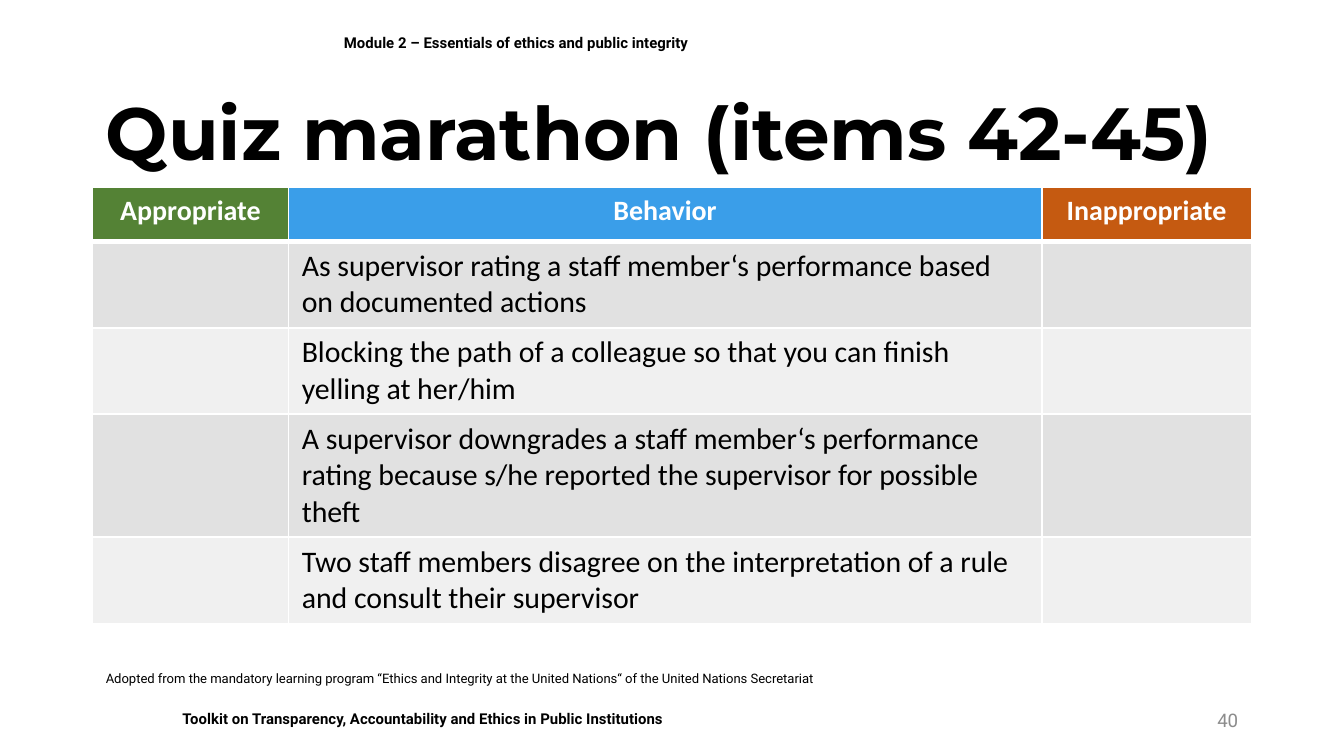
from lxml import etree
from pptx import Presentation
from pptx.dml.color import RGBColor
from pptx.enum import shapes, text
from pptx.oxml.ns import qn
from pptx.util import Cm, Pt

THEME = {
    "black": "000000", "white": "FFFFFF", "grey": "8C8C8C",
    "green": "548235", "blue": "3A9EE9", "orange": "C55A11",
    "bands": ("E1E1E1", "F0F0F0"),
    "title_font": "Montserrat", "label_font": "Roboto", "table_font": "Calibri",
    "title": 39.6, "behavior": 16, "heading": 15, "number": 10, "label": 8, "source": 7,
}

MARGIN, CONTENT_WIDTH = 1.75, 21.9
TABLE_TOP = 3.53
HEADING_HEIGHT = 1.03
COLUMNS = [  # heading, colour, width in cm
    ("Appropriate", "green", 3.7),
    ("Behavior", "blue", 14.24),
    ("Inappropriate", "orange", 3.96),
]
BEHAVIORS = [  # wording, row height in cm
    ("As supervisor rating a staff member‘s performance based on documented actions", 1.61),
    ("Blocking the path of a colleague so that you can finish yelling at her/him", 1.61),
    ("A supervisor downgrades a staff member‘s performance rating because s/he reported "
     "the supervisor for possible theft", 2.29),
    ("Two staff members disagree on the interpretation of a rule and consult their supervisor", 1.61),
]

FOOTER = "Toolkit on Transparency, Accountability and Ethics in Public Institutions"
FOOTER_BOX = (3.2, 13.28, 18.21, 0.61)
TEXT_BOXES = [  # wording, left/top/width/height in cm, format
    ("Module 2 – Essentials of ethics and public integrity", (6.25, 0.25, 17.4, 1.12),
     dict(size="label", bold=True, anchor="MIDDLE")),
    ("40", (17.93, 13.23, 5.72, 0.76),
     dict(size="number", color="grey", align="RIGHT", anchor="MIDDLE")),
    ("Quiz marathon (items 42-45)", (MARGIN, 1.63, CONTENT_WIDTH, 1.9),
     dict(size="title", font="title_font", bold=True, anchor="MIDDLE", line_spacing=0.9)),
    ("Adopted from the mandatory learning program “Ethics and Integrity at the United "
     "Nations“ of the United Nations Secretariat", (MARGIN, 12.55, 14.05, 0.56),
     dict(size="source")),
]


def theme_color(name):
    return RGBColor.from_string(THEME.get(name, name))


def write(frame, wording, size, font="label_font", color="black", bold=False,
          align="LEFT", anchor="TOP", line_spacing=None):
    frame.word_wrap = True
    frame.vertical_anchor = text.MSO_ANCHOR[anchor]
    paragraph = frame.paragraphs[0]
    paragraph.alignment = text.PP_ALIGN[align]
    if line_spacing:
        paragraph.line_spacing = line_spacing
    run = paragraph.add_run()
    run.text = wording
    run.font.size = Pt(THEME[size])
    run.font.name = THEME[font]
    run.font.bold = bold
    run.font.color.rgb = theme_color(color)


def style_cell(cell, fill, top=1, bottom=1):
    """Fill a cell and give it white borders, widths in points."""
    properties = cell._tc.get_or_add_tcPr()
    for side, width in (("L", 1), ("R", 1), ("T", top), ("B", bottom)):
        border = etree.SubElement(properties, qn(f"a:ln{side}"), w=str(Pt(width)))
        solid = etree.SubElement(border, qn("a:solidFill"))
        etree.SubElement(solid, qn("a:srgbClr"), val=THEME["white"])
    cell.fill.solid()
    cell.fill.fore_color.rgb = theme_color(fill)


def add_footer(slide):
    footer = slide.shapes.add_shape(shapes.MSO_SHAPE.RECTANGLE, *map(Cm, FOOTER_BOX))
    footer.shadow.inherit = False
    footer.fill.solid()
    footer.fill.fore_color.rgb = theme_color("white")
    footer.line.fill.background()
    write(footer.text_frame, FOOTER, size="label", bold=True)


def add_quiz_table(slide):
    heights = [HEADING_HEIGHT] + [height for _, height in BEHAVIORS]
    table = slide.shapes.add_table(
        len(heights), len(COLUMNS), Cm(MARGIN), Cm(TABLE_TOP),
        Cm(CONTENT_WIDTH), Cm(sum(heights))).table
    for row, height in zip(table.rows, heights):
        row.height = Cm(height)
    for index, (heading, color, width) in enumerate(COLUMNS):
        table.columns[index].width = Cm(width)
        cell = table.cell(0, index)
        style_cell(cell, color, bottom=3)
        write(cell.text_frame, heading, size="heading", font="table_font",
              color="white", bold=True, align="CENTER")
    for row, (behavior, _) in enumerate(BEHAVIORS, start=1):
        for column in range(len(COLUMNS)):
            style_cell(table.cell(row, column), THEME["bands"][(row - 1) % 2],
                       top=3 if row == 1 else 1)
        write(table.cell(row, 1).text_frame, behavior, size="behavior", font="table_font")


def main():
    presentation = Presentation()
    presentation.slide_width, presentation.slide_height = Cm(25.4), Cm(14.29)
    slide = presentation.slides.add_slide(presentation.slide_layouts[6])
    add_footer(slide)
    add_quiz_table(slide)
    for wording, box, text_format in TEXT_BOXES:
        write(slide.shapes.add_textbox(*map(Cm, box)).text_frame, wording, **text_format)
    presentation.save("out.pptx")


if __name__ == "__main__":
    main()
